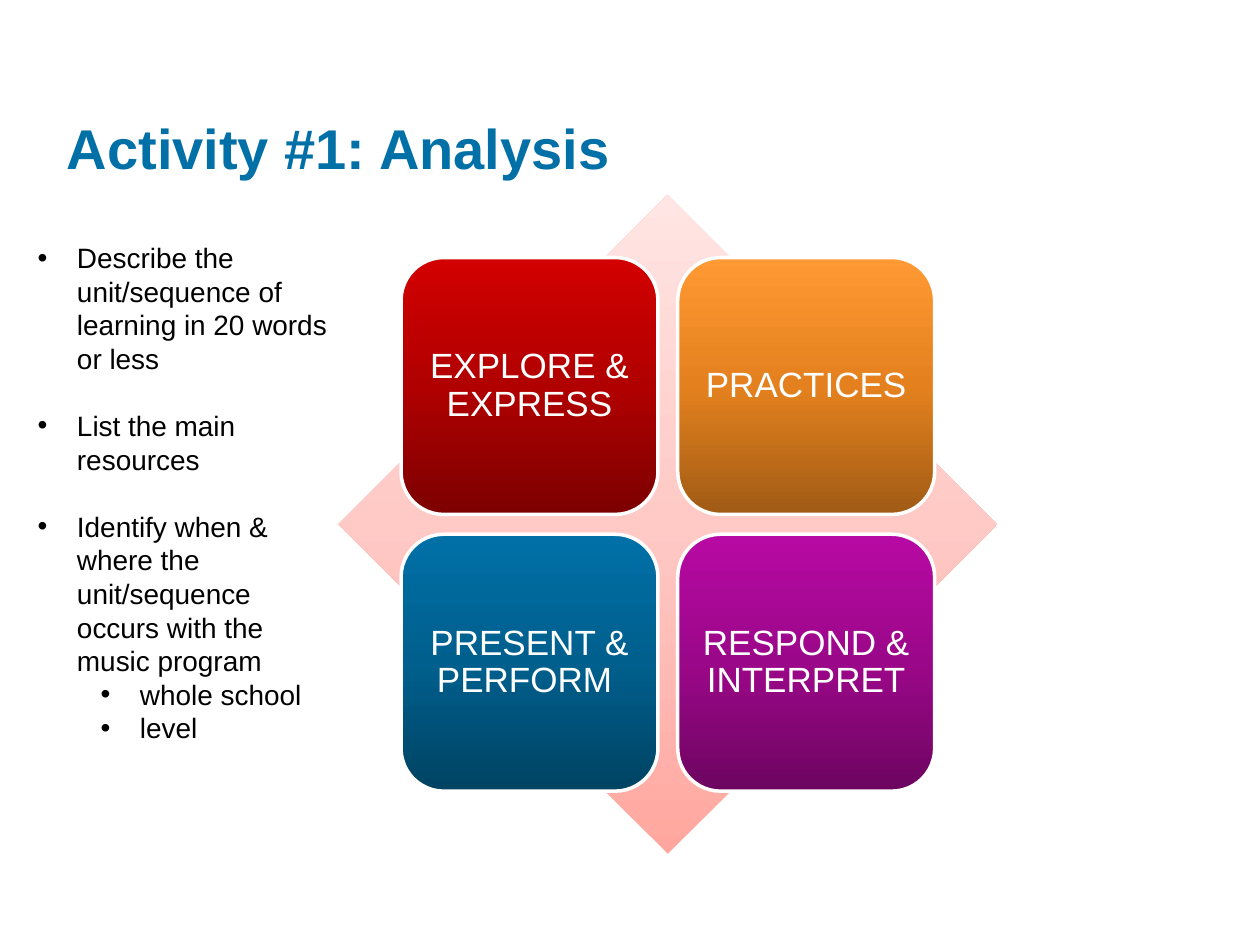
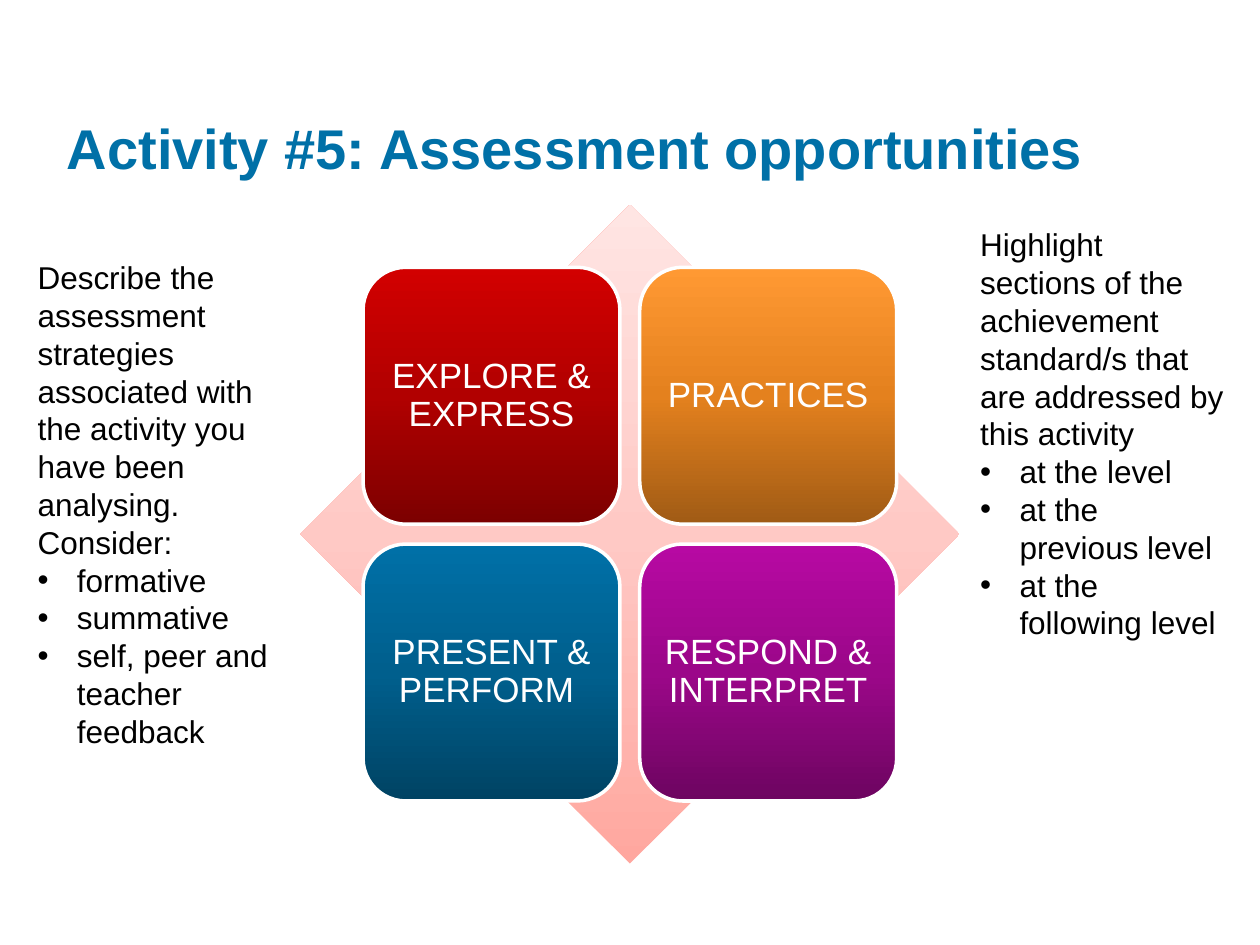
from copy import deepcopy
from lxml.etree import SubElement
from pptx import Presentation
from pptx.dml.color import RGBColor
from pptx.enum.shapes import MSO_SHAPE
from pptx.enum.text import MSO_ANCHOR, MSO_AUTO_SIZE, PP_ALIGN
from pptx.oxml.ns import qn
from pptx.util import Pt

FONT = "Arial"
TITLE_BLUE = "0070A7"
BLACK = "000000"
WHITE = "FFFFFF"
DIAMOND_COLOURS = ["FFA79F", "FFC9C5", "FFE5E3"]
DIAMOND_SIDE = 376.5
TILE_SIDE = 0.39 * DIAMOND_SIDE
TILE_OFFSET = 0.095 * DIAMOND_SIDE
TILE_STEP = 0.42 * DIAMOND_SIDE
TILE_INSET = 5.75
BULLET_INDENT = 22.5
LEVEL_INDENT = 36
TILES = [
    ("EXPLORE & EXPRESS", ["7C0000", "B10000", "D20000"]),
    ("PRACTICES", ["A05B15", "E4811E", "FF9933"]),
    ("PRESENT & PERFORM ", ["004363", "005F8D", "0070A7"]),
    ("RESPOND & INTERPRET", ["6D0560", "9B0789", "B709A3"]),
]

# level None is plain text, 0 and 1 are bullet levels; the last value is space after
ACTIVITIES = [
    {
        "title": "Activity #1: Analysis",
        "diamond": (193.4, 111.4),
        "notes": [
            ((14.4, 134, 187, 317.5), 16, [
                ("Describe the unit/sequence of learning in 20 words or less", 0, 19.2),
                ("List the main resources", 0, 19.2),
                ("Identify when & where the unit/sequence occurs with the music program", 0, 0),
                ("whole school", 1, 0),
                ("level", 1, 0),
            ]),
        ],
    },
    {
        "title": "Activity #5: Assessment opportunities",
        "diamond": (171.7, 117),
        "notes": [
            ((14.4, 144, 153.4, 378), 18, [
                ("Describe the assessment strategies associated with the activity "
                 "you have been analysing. Consider:", None, 0),
                ("formative", 0, 0),
                ("summative", 0, 0),
                ("self, peer and teacher feedback", 0, 0),
            ]),
            ((553, 125.3, 153.4, 247), 18, [
                ("Highlight sections of the achievement standard/s that are "
                 "addressed by this activity", None, 0),
                ("at the level", 0, 0),
                ("at the previous level", 0, 0),
                ("at the following level", 0, 0),
            ]),
        ],
    },
]


def add_text(paragraph, text, size, colour, bold=False):
    run = paragraph.add_run()
    run.text = text
    run.font.name = FONT
    run.font.size = Pt(size)
    run.font.bold = bold
    run.font.color.rgb = RGBColor.from_string(colour)


def add_gradient_shape(group, kind, left, top, side, colours):
    shape = group.shapes.add_shape(kind, Pt(left), Pt(top), Pt(side), Pt(side))
    shape.shadow.inherit = False
    shape.fill.gradient()
    shape.fill.gradient_angle = 90
    stop_list = shape.fill._xPr.find(".//" + qn("a:gsLst"))
    stop_list.append(deepcopy(stop_list[0]))
    for stop, position, colour in zip(shape.fill.gradient_stops, (0, 0.5, 1), colours):
        stop.position = position
        stop.color.rgb = RGBColor.from_string(colour)
    shape.line.fill.background()
    return shape


presentation = Presentation()
presentation.slide_width = Pt(720)
presentation.slide_height = Pt(540)

for activity in ACTIVITIES:
    slide = presentation.slides.add_slide(presentation.slide_layouts[5])
    title = slide.shapes.title
    title.left, title.top, title.width, title.height = Pt(31), Pt(45.4), Pt(669), Pt(77)
    title.text_frame.auto_size = MSO_AUTO_SIZE.NONE
    title.text_frame.vertical_anchor = MSO_ANCHOR.MIDDLE
    paragraph = title.text_frame.paragraphs[0]
    paragraph.alignment = PP_ALIGN.LEFT
    add_text(paragraph, activity["title"], 32, TITLE_BLUE, bold=True)

    group = slide.shapes.add_group_shape()
    left, top = activity["diamond"]
    add_gradient_shape(group, MSO_SHAPE.DIAMOND, left, top, DIAMOND_SIDE, DIAMOND_COLOURS)
    for index, (label, colours) in enumerate(TILES):
        row, column = divmod(index, 2)
        tile = add_gradient_shape(
            group, MSO_SHAPE.ROUNDED_RECTANGLE,
            left + TILE_OFFSET + column * TILE_STEP,
            top + TILE_OFFSET + row * TILE_STEP,
            TILE_SIDE, colours)
        tile.line.color.rgb = RGBColor.from_string(WHITE)
        tile.line.width = Pt(2)
        frame = tile.text_frame
        frame.word_wrap = True
        frame.vertical_anchor = MSO_ANCHOR.MIDDLE
        frame.margin_left = frame.margin_right = Pt(TILE_INSET)
        frame.margin_top = frame.margin_bottom = Pt(TILE_INSET)
        paragraph = frame.paragraphs[0]
        paragraph.alignment = PP_ALIGN.CENTER
        paragraph.line_spacing = 0.9
        add_text(paragraph, label, 20, WHITE)

    for bounds, size, lines in activity["notes"]:
        frame = slide.shapes.add_textbox(*map(Pt, bounds)).text_frame
        frame.word_wrap = True
        for index, (text, level, space_after) in enumerate(lines):
            paragraph = frame.add_paragraph() if index else frame.paragraphs[0]
            if level is not None:
                properties = paragraph._p.get_or_add_pPr()
                properties.set("marL", str(Pt(BULLET_INDENT + level * LEVEL_INDENT)))
                properties.set("indent", str(-Pt(BULLET_INDENT)))
                SubElement(properties, qn("a:buFont"), typeface=FONT)
                SubElement(properties, qn("a:buChar"), char="•")
                paragraph.level = level
            paragraph.space_after = Pt(space_after)
            add_text(paragraph, text, size, BLACK)

presentation.save("out.pptx")
